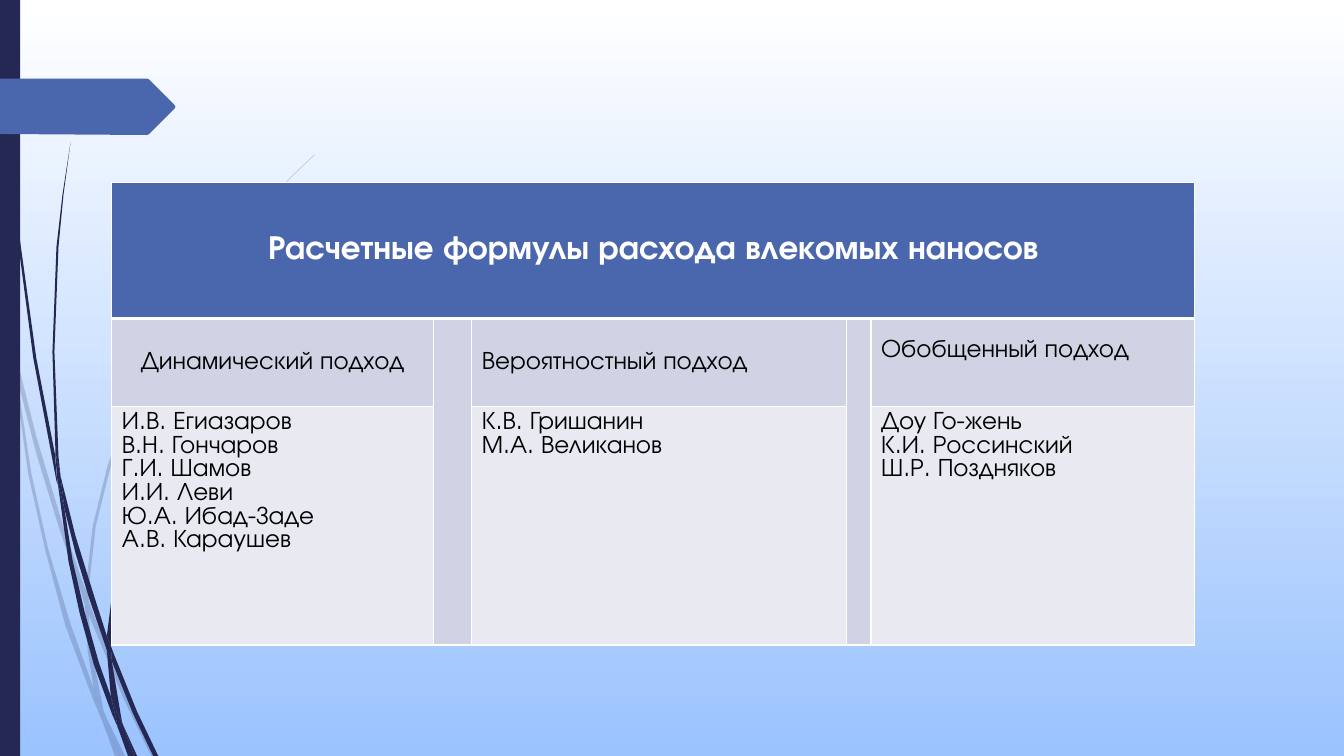
from lxml import etree
from pptx import Presentation
from pptx.dml.color import RGBColor
from pptx.enum.shapes import MSO_SHAPE
from pptx.enum.text import MSO_ANCHOR, PP_ALIGN
from pptx.oxml.ns import qn
from pptx.util import Inches, Pt

RECTANGLE = MSO_SHAPE.RECTANGLE
MIDDLE, TOP = MSO_ANCHOR.MIDDLE, MSO_ANCHOR.TOP
CENTER, LEFT = PP_ALIGN.CENTER, PP_ALIGN.LEFT
FONT = "TeX Gyre Adventor"
COLORS = {
    "white": "FFFFFF", "sky": "9BC3FE", "navy": "242852", "blue": "4A66AC",
    "band": "D0D3E3", "pale": "E9EAF1", "black": "000000",
}

deck = Presentation()
deck.slide_width, deck.slide_height = Inches(13.33), Inches(7.5)
page = deck.slides.add_slide(deck.slide_layouts[6])


def paint(shape, color, alpha=100):
    shape.shadow.inherit = False
    shape.fill.solid()
    shape.fill.fore_color.rgb = RGBColor.from_string(COLORS[color])
    shape.line.fill.background()
    if alpha < 100:
        tint = shape.fill._xPr.find(qn("a:solidFill"))[0]
        etree.SubElement(tint, qn("a:alpha")).set("val", str(alpha * 1000))


def add_outline(points, color, alpha=100):
    corners = [(Inches(x), Inches(y)) for x, y in points]
    builder = page.shapes.build_freeform(*corners[0], scale=1.0)
    builder.add_line_segments(corners[1:], close=True)
    paint(builder.convert_to_shape(), color, alpha)


# Background
backdrop = page.background.fill
backdrop.gradient()
backdrop.gradient_angle = 270
for stop, name, position in zip(backdrop.gradient_stops, ("white", "sky"), (0, 1)):
    stop.color.rgb = RGBColor.from_string(COLORS[name])
    stop.position = position

# Grass blades: each piece is a closed outline in inches
faint_blades = [
    [(0.11, 3.5), (0.09, 3.22), (0, 2.82), (0, 2.99), (0.1, 3.44)],
    [(0.58, 5.22), (0.84, 5.99), (0.85, 5.86), (0.62, 5.2), (0.36, 4.33), (0.14, 3.45),
     (0.17, 3.76), (0.36, 4.5)],
    [(0.92, 6.07), (0.88, 5.96), (0.88, 6.1), (1.23, 6.94), (1.5, 7.5), (1.55, 7.5),
     (1.27, 6.92)],
    [(1.19, 7.5), (1.24, 7.5), (1.05, 7.11)],
    [(0.93, 6.83), (0.7, 6.19), (0.48, 5.45), (0.31, 4.69), (0.17, 3.76), (0.11, 3.5),
     (0.28, 4.7), (0.45, 5.46), (0.65, 6.21), (0.92, 6.93), (1.01, 7.14), (0.99, 7.07)],
    [(0.84, 5.99), (0.87, 6.46), (0.93, 6.83), (0.96, 6.92), (1.05, 7.11), (1.03, 7.06),
     (0.91, 6.46), (0.88, 6.1), (0.88, 6.08)],
    [(0.88, 5.84), (0.95, 5.22), (1.1, 4.62), (1.33, 4.04), (1.6, 3.49), (1.93, 2.95),
     (2.29, 2.45), (2.68, 1.98), (2.9, 1.75), (3.12, 1.54), (3.12, 1.53), (2.89, 1.75),
     (2.68, 1.97), (2.28, 2.44), (1.91, 2.94), (1.58, 3.48), (1.3, 4.03), (1.07, 4.61),
     (0.92, 5.22), (0.85, 5.84), (0.85, 5.86), (0.88, 5.96)],
    [(1.01, 7.14), (1.14, 7.5), (1.19, 7.5)],
    [(0.88, 6.08), (0.88, 6.1), (0.88, 5.96), (0.85, 5.86), (0.84, 5.99)],
    [(0.96, 6.92), (0.93, 6.83), (0.99, 7.07), (1.01, 7.14), (1.19, 7.5), (1.05, 7.11)],
]
dark_blades = [
    [(0.07, 1.1), (0.17, 2.33), (0.33, 3.55), (0.56, 4.77), (0.57, 4.81), (0.55, 4.57),
     (0.55, 4.53), (0.36, 3.55), (0.19, 2.32), (0.08, 1.09), (0.05, 0.48), (0.04, 0),
     (0.03, 0), (0.04, 0.48)],
    [(0.88, 5.92), (1.06, 6.45), (1.06, 6.31), (0.93, 5.9), (0.75, 5.32), (0.6, 4.72),
     (0.64, 5.05), (0.75, 5.49)],
    [(1.13, 6.49), (1.1, 6.41), (1.11, 6.56), (1.32, 7.08), (1.52, 7.5), (1.57, 7.5),
     (1.36, 7.06)],
    [(1.1, 6.91), (0.98, 6.57), (0.84, 6.07), (0.72, 5.56), (0.64, 5.05), (0.57, 4.77),
     (0.68, 5.57), (0.79, 6.08), (0.93, 6.59), (1.11, 7.08), (1.17, 7.22), (1.16, 7.17)],
    [(0.6, 4.72), (0.58, 4.53), (0.54, 3.49), (0.58, 2.45), (0.63, 1.93), (0.7, 1.41),
     (0.62, 1.93), (0.56, 2.45), (0.52, 3.49), (0.55, 4.49)],
    [(1.33, 7.5), (1.36, 7.5), (1.22, 7.19)],
    [(0.57, 4.77), (0.64, 5.05), (0.6, 4.72), (0.55, 4.49), (0.55, 4.53)],
    [(1.11, 6.33), (1.15, 5.92), (1.25, 5.52), (1.4, 5.13), (1.58, 4.76), (1.8, 4.4),
     (2.05, 4.06), (2.31, 3.74), (2.45, 3.59), (2.61, 3.44), (2.6, 3.44), (2.45, 3.58),
     (2.31, 3.73), (2.04, 4.05), (1.78, 4.39), (1.56, 4.74), (1.37, 5.12), (1.22, 5.51),
     (1.11, 5.91), (1.06, 6.31), (1.1, 6.41)],
    [(1.17, 7.22), (1.27, 7.5), (1.31, 7.5)],
    [(1.06, 6.45), (1.1, 6.91), (1.16, 7.06), (1.22, 7.19), (1.21, 7.16), (1.11, 6.56),
     (1.09, 6.51)],
    [(1.06, 6.45), (1.09, 6.51), (1.11, 6.56), (1.1, 6.41), (1.06, 6.31)],
    [(1.16, 7.06), (1.1, 6.91), (1.16, 7.17), (1.17, 7.22), (1.3, 7.5), (1.33, 7.5),
     (1.22, 7.19)],
]
for blades, alpha in ((faint_blades, 20), (dark_blades, 100)):
    for blade in blades:
        add_outline(blade, "navy", alpha)

# Side bar and arrow tag
side_bar = page.shapes.add_shape(RECTANGLE, 0, 0, Inches(0.2), Inches(7.5))
paint(side_bar, "navy")
add_outline([(0, 0.78), (1.46, 0.78), (1.48, 0.79), (1.73, 1.04), (1.74, 1.06),
             (1.73, 1.08), (1.48, 1.33), (1.46, 1.34), (0, 1.33)], "blue")

# Table of approaches and their authors
widths = [3.19, 0.38, 3.72, 0.24, 3.21]
heights = [1.35, 0.87, 2.37]
approaches = {
    0: ("Динамический подход", ["И.В. Егиазаров", "В.Н. Гончаров", "Г.И. Шамов",
                                "И.И. Леви", "Ю.А. Ибад-Заде", "А.В. Караушев"]),
    2: ("Вероятностный подход", ["К.В. Гришанин", "М.А. Великанов"]),
    4: ("Обобщенный подход", ["Доу Го-жень", "К.И. Россинский", "Ш.Р. Поздняков"]),
}
table = page.shapes.add_table(3, 5, Inches(1.11), Inches(1.81),
                              Inches(sum(widths)), Inches(sum(heights))).table
for column, width in zip(table.columns, widths):
    column.width = Inches(width)
for row, height in zip(table.rows, heights):
    row.height = Inches(height)

texts = {(0, 0): ["Расчетные формулы расхода влекомых наносов"]}
for column, (approach, authors) in approaches.items():
    texts[1, column] = [approach]
    texts[2, column] = authors

for row in range(3):
    for column in range(5):
        cell = table.cell(row, column)
        is_gap = row > 0 and column not in approaches
        color = "band" if is_gap else ("blue", "band", "pale")[row]
        cell.fill.solid()
        cell.fill.fore_color.rgb = RGBColor.from_string(COLORS[color])
        properties = cell._tc.get_or_add_tcPr()
        for index, side in enumerate("LRTB"):
            thick = (row, side) in ((0, "B"), (1, "T"))
            border = etree.Element(qn(f"a:ln{side}"), w=str(Pt(3 if thick else 1)))
            line_fill = etree.SubElement(border, qn("a:solidFill"))
            etree.SubElement(line_fill, qn("a:srgbClr"), val=COLORS["white"])
            properties.insert(index, border)
        if (row, column) not in texts:
            continue
        cell.vertical_anchor = TOP if row == 2 else MIDDLE
        cell.text = "\n".join(texts[row, column])
        for para in cell.text_frame.paragraphs:
            para.alignment = CENTER if row < 2 and column == 0 else LEFT
            para.font.name = FONT
            para.font.size = Pt(24 if row == 0 else 18)
            para.font.bold = row == 0
            para.font.color.rgb = RGBColor.from_string(COLORS["white" if row == 0 else "black"])

table.cell(1, 4).margin_bottom = Inches(0.29)
table.cell(0, 0).merge(table.cell(0, 4))
for gap in (1, 3):
    table.cell(1, gap).merge(table.cell(2, gap))

deck.save("out.pptx")
